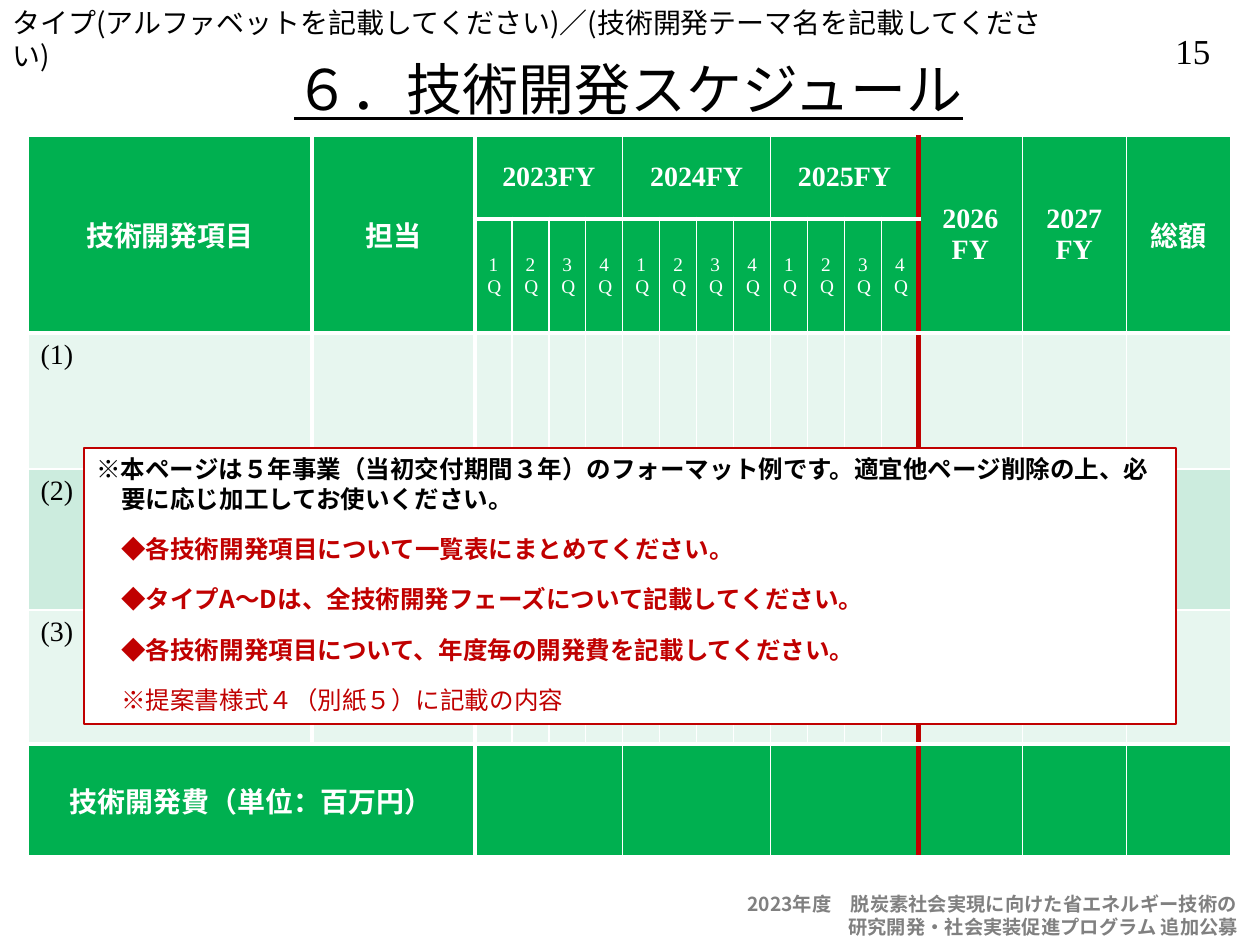
from pptx import Presentation
from pptx.dml.color import RGBColor as RGB
from pptx.enum.shapes import MSO_SHAPE as SHAPE
from pptx.enum.text import MSO_ANCHOR as ANCHOR, PP_ALIGN as ALIGN
from pptx.oxml.ns import qn
from pptx.util import Pt
from lxml import etree

PX = 914400 // 126
SANS, SERIF = "Noto Sans CJK JP", "Times New Roman"
C = {"black": "000000", "white": "FFFFFF", "green": "00B050", "red": "C00000",
     "grey": "808080", "pale": "E7F6EF", "mint": "CCECDE"}

COLS = [284, 163] + [37] * 12 + [104] * 3
ROWS = [83, 114, 136, 141, 134, 112]
YEARS = (2, 6, 10)
THICK_X, RED_X = (1, 2), 14
THICK_Y = (2, 5)


def px(*values):
    return [v * PX for v in values]


def style(r, fmt):
    """Apply size, bold, underline, name and colour to a run."""
    fmt = dict(fmt)
    r.font.color.rgb = RGB.from_string(C[fmt.pop("color", "black")])
    fmt.setdefault("name", SANS)
    fmt["size"] = Pt(fmt["size"])
    for key, value in fmt.items():
        setattr(r.font, key, value)
    ea = etree.SubElement(r.font._element, qn("a:ea"))
    ea.set("typeface", SANS)


def write(tf, lines, align=ALIGN.LEFT, **fmt):
    """Write one paragraph a line; returns the paragraphs."""
    for i, line in enumerate(lines):
        p = tf.paragraphs[0] if i == 0 else tf.add_paragraph()
        p.alignment = align
        r = p.add_run()
        r.text = line
        style(r, fmt)
    return tf.paragraphs


def indent(p, left, first=0):
    pPr = p._p.get_or_add_pPr()
    pPr.set("marL", str(left * PX))
    pPr.set("indent", str(first * PX))


def add_text(s, box, lines, wrap=True, anchor=ANCHOR.TOP, **fmt):
    tf = s.shapes.add_textbox(*px(*box)).text_frame
    tf.word_wrap = wrap
    tf.vertical_anchor = anchor
    return write(tf, lines, **fmt)


def set_borders(cell, sides):
    """sides: (tag, colour, points) in the order left, right, top, bottom."""
    tcPr = cell._tc.get_or_add_tcPr()
    for i, (tag, color, width) in enumerate(sides):
        ln = etree.Element(qn("a:" + tag), w=str(Pt(width)))
        fill = etree.SubElement(ln, qn("a:solidFill"))
        etree.SubElement(fill, qn("a:srgbClr"), val=C[color])
        tcPr.insert(i, ln)


def column_line(x):
    if x == RED_X:
        return "red", 3
    return "white", 3 if x in THICK_X else 1


def row_line(y, col):
    under_years = y == 1 and 2 <= col < RED_X
    return "white", 3 if y in THICK_Y or under_years else 1


def format_cell(cell, row, col):
    cell.fill.solid()
    fill = {2: "pale", 3: "mint", 4: "pale"}.get(row, "green")
    cell.fill.fore_color.rgb = RGB.from_string(C[fill])
    right = col + (cell.span_width if cell.is_merge_origin else 1)
    bottom = row + (cell.span_height if cell.is_merge_origin else 1)
    set_borders(cell, [("lnL", *column_line(col)), ("lnR", *column_line(right)),
                       ("lnT", *row_line(row, col)), ("lnB", *row_line(bottom, col))])


def add_schedule(s):
    frame = s.shapes.add_table(len(ROWS), len(COLS), *px(28, 136, sum(COLS), sum(ROWS)))
    t = frame.table
    for col, w in zip(t.columns, COLS):
        col.width = w * PX
    for row, h in zip(t.rows, ROWS):
        row.height = h * PX

    # Merged headings and totals
    for c in (0, 1, 14, 15, 16):
        t.cell(0, c).merge(t.cell(1, c))
    t.cell(5, 0).merge(t.cell(5, 1))
    for r in (0, 5):
        for c in YEARS:
            t.cell(r, c).merge(t.cell(r, c + 3))

    for r in range(len(ROWS)):
        for c in range(len(COLS)):
            if not t.cell(r, c).is_spanned:
                format_cell(t.cell(r, c), r, c)

    # Cell texts
    headings = {(0, 0): ["技術開発項目"], (0, 1): ["担当"],
                (0, 14): ["2026", "FY"], (0, 15): ["2027", "FY"], (0, 16): ["総額"],
                (5, 0): ["技術開発費（単位：百万円）"]}
    for i, c in enumerate(YEARS):
        headings[0, c] = [f"{2023 + i}FY"]
    quarters = {(1, c): [f"{(c - 2) % 4 + 1}Q"] for c in range(2, RED_X)}
    for texts, size, bold in ((headings, 16, True), (quarters, 11, False)):
        for (r, c), lines in texts.items():
            cell = t.cell(r, c)
            cell.vertical_anchor = ANCHOR.MIDDLE
            write(cell.text_frame, lines, ALIGN.CENTER, name=SERIF, size=size,
                  bold=bold, color="white")
    for i in (1, 2, 3):
        write(t.cell(i + 1, 0).text_frame, [f"({i})"], name=SERIF, size=16, bold=False)


def add_note(s):
    sp = s.shapes.add_shape(SHAPE.RECTANGLE, *px(84, 448, 1092, 276))
    sp.shadow.inherit = False
    sp.fill.solid()
    sp.fill.fore_color.rgb = RGB.from_string(C["white"])
    sp.line.color.rgb = RGB.from_string(C["red"])
    sp.line.width = Pt(1.5)
    tf = sp.text_frame
    tf.word_wrap = True
    tf.vertical_anchor = ANCHOR.TOP
    lines = [
        ("※本ページは５年事業（当初交付期間３年）のフォーマット例です。"
         "適宜他ページ削除の上、必要に応じ加工してお使いください。"),
        "◆各技術開発項目について一覧表にまとめてください。",
        "◆タイプA～Dは、全技術開発フェーズについて記載してください。",
        "◆各技術開発項目について、年度毎の開発費を記載してください。",
        "※提案書様式４（別紙５）に記載の内容",
    ]
    first, *rest = write(tf, lines, size=14, bold=True)
    indent(first, 25, -25)
    for p in rest:
        indent(p, 25)
        p.space_before = Pt(12)
        p.runs[0].font.color.rgb = RGB.from_string(C["red"])
    rest[-1].runs[0].font.bold = False


def main():
    prs = Presentation()
    prs.slide_width, prs.slide_height = px(1260, 945)
    s = prs.slides.add_slide(prs.slide_layouts[6])

    # Page number, header and footer
    add_text(s, (1152, 23, 82, 54), ["15"], wrap=False, align=ALIGN.CENTER,
             name=SERIF, size=20)
    add_text(s, (0, -1, 1058, 47),
             ["タイプ(アルファベットを記載してください)／(技術開発テーマ名を記載してください)"],
             size=16)
    footer = add_text(s, (735, 886, 525, 59),
                      ["2023年度　脱炭素社会実現に向けた省エネルギー技術の",
                       "研究開発・社会実装促進プログラム 追加公募"],
                      size=11, bold=True, color="grey")
    indent(footer[1], 101)

    # Title, schedule and note
    add_text(s, (93, 44, 1071, 88), ["６．技術開発スケジュール"], anchor=ANCHOR.MIDDLE,
             align=ALIGN.CENTER, size=32, underline=True)
    add_schedule(s)
    add_note(s)

    prs.save("out.pptx")


if __name__ == "__main__":
    main()
